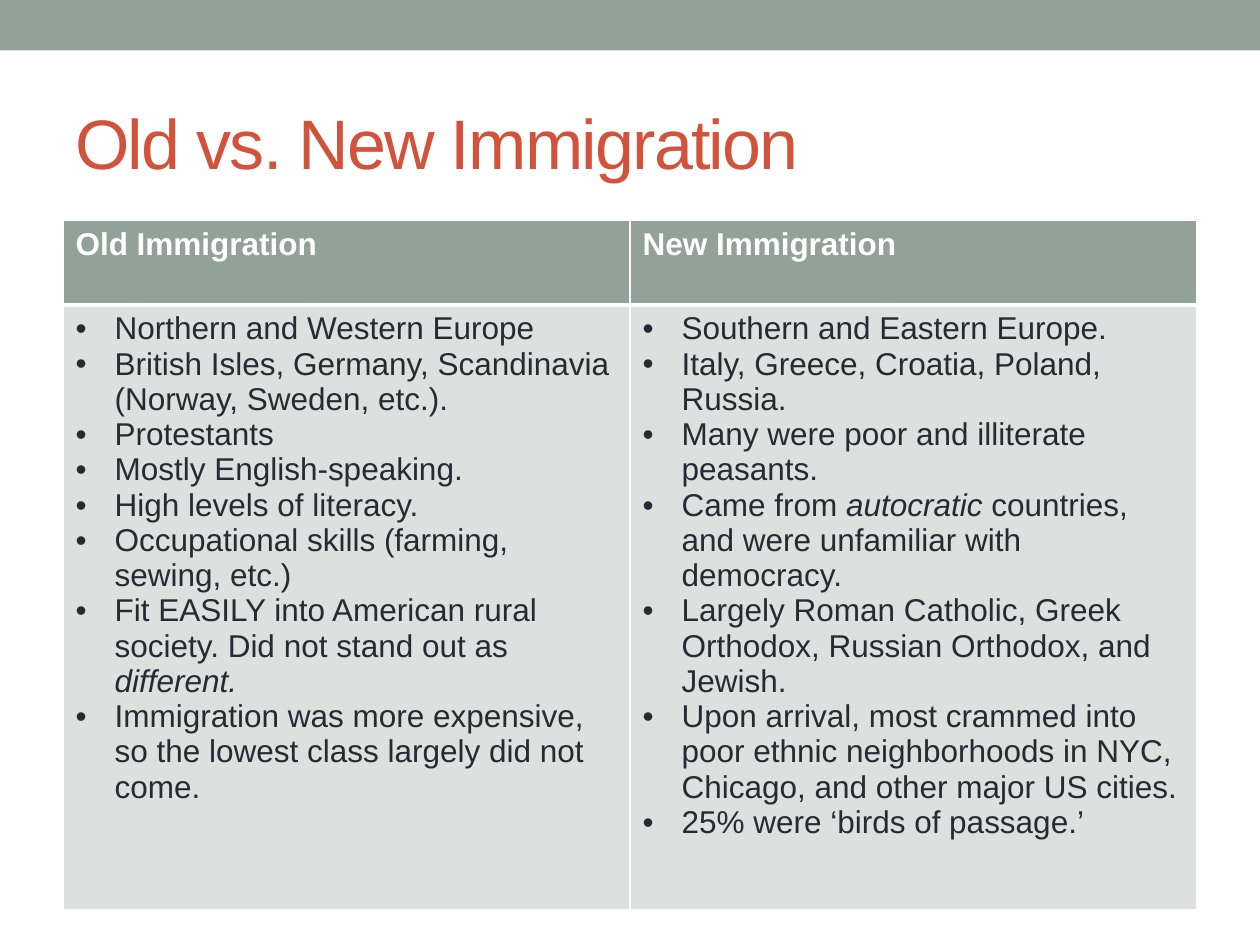
from pptx import Presentation
from pptx.dml.color import RGBColor
from pptx.enum.shapes import MSO_SHAPE
from pptx.enum.text import MSO_ANCHOR
from pptx.oxml import parse_xml
from pptx.oxml.ns import nsdecls
from pptx.util import Inches, Pt

RECT = MSO_SHAPE.RECTANGLE
MIDDLE = MSO_ANCHOR.MIDDLE

SAGE = RGBColor(0x93, 0xA2, 0x99)
MIST = RGBColor(0xDC, 0xE0, 0xDE)
RUST = RGBColor(0xD2, 0x53, 0x3C)
INK = RGBColor(0x29, 0x29, 0x34)
WHITE = RGBColor(0xFF, 0xFF, 0xFF)

HEADS = ["Old Immigration", "New Immigration"]

# Asterisks enclose words in italics
LISTS = [
    [
        "Northern and Western Europe",
        "British Isles, Germany, Scandinavia (Norway, Sweden, etc.).",
        "Protestants",
        "Mostly English-speaking.",
        "High levels of literacy.",
        "Occupational skills (farming, sewing, etc.)",
        "Fit EASILY into American rural society. Did not stand out as *different.*",
        "Immigration was more expensive, so the lowest class largely did not come.",
    ],
    [
        "Southern and Eastern Europe.",
        "Italy, Greece, Croatia, Poland, Russia.",
        "Many were poor and illiterate peasants.",
        "Came from *autocratic* countries, and were unfamiliar with democracy.",
        "Largely Roman Catholic, Greek Orthodox, Russian Orthodox, and Jewish.",
        "Upon arrival, most crammed into poor ethnic neighborhoods in NYC, "
        "Chicago, and other major US cities.",
        "25% were ‘birds of passage.’",
    ],
]


class Deck:
    """Holds the style and the current slide; lengths are in inches."""

    face = "Arial"
    wide, high = 10, 7.5
    edge = 0.5
    inner = wide - 2 * edge
    indent = Inches(0.31)

    def __init__(self):
        self.prs = Presentation()
        self.prs.slide_width = Inches(self.wide)
        self.prs.slide_height = Inches(self.high)
        self.slide = self.prs.slides.add_slide(self.prs.slide_layouts[6])

    def style(self, para, size, color, bold=False):
        font = para.font
        font.name, font.size, font.bold = self.face, Pt(size), bold
        font.color.rgb = color

    def band(self, height):
        bar = self.slide.shapes.add_shape(
            RECT, 0, 0, Inches(self.wide), Inches(height))
        bar.shadow.inherit = False
        bar.fill.solid()
        bar.fill.fore_color.rgb = SAGE
        bar.line.fill.background()

    def title(self, text, top, height):
        box = self.slide.shapes.add_textbox(
            Inches(self.edge), Inches(top), Inches(self.inner), Inches(height))
        frame = box.text_frame
        frame.word_wrap = True
        frame.vertical_anchor = MIDDLE
        para = frame.paragraphs[0]
        run = para.add_run()
        run.text = text
        run._r.get_or_add_rPr().set("spc", "-100")
        self.style(para, 40, RUST)

    def table(self, top, rows):
        shape = self.slide.shapes.add_table(
            len(rows), len(HEADS), Inches(self.edge), Inches(top),
            Inches(self.inner), Inches(sum(rows)))
        grid = shape.table
        for row, height in zip(grid.rows, rows):
            row.height = Inches(height)
        for col, (head, items) in enumerate(zip(HEADS, LISTS)):
            self.header(grid.cell(0, col), head)
            self.bullets(grid.cell(1, col), items)

    def header(self, cell, text):
        self.paint(cell, SAGE, low=3)
        para = cell.text_frame.paragraphs[0]
        para.text = text
        self.style(para, 18, WHITE, True)

    def bullets(self, cell, items):
        self.paint(cell, MIST, high=3)
        frame = cell.text_frame
        for num, item in enumerate(items):
            para = frame.add_paragraph() if num else frame.paragraphs[0]
            props = para._p.get_or_add_pPr()
            props.set("marL", str(self.indent))
            props.set("indent", str(-self.indent))
            props.append(parse_xml(
                f'<a:buFont {nsdecls("a")} typeface="{self.face}"/>'))
            props.append(parse_xml(f'<a:buChar {nsdecls("a")} char="•"/>'))
            for part, text in enumerate(item.split("*")):
                if text:
                    run = para.add_run()
                    run.text = text
                    if part % 2:
                        run.font.italic = True
            self.style(para, 18, INK)

    def paint(self, cell, color, high=1, low=1):
        # Borders must stand before the fill
        props = cell._tc.get_or_add_tcPr()
        for side, width in zip("LRTB", (1, 1, high, low)):
            props.append(parse_xml(
                f'<a:ln{side} {nsdecls("a")} w="{Pt(width)}"><a:solidFill>'
                f'<a:srgbClr val="{WHITE}"/></a:solidFill></a:ln{side}>'))
        cell.fill.solid()
        cell.fill.fore_color.rgb = color


def main():
    deck = Deck()
    deck.band(0.4)
    deck.title("Old vs. New Immigration", 0.58, 1.08)
    deck.table(1.75, [0.67, 4.8])
    deck.prs.save("out.pptx")


if __name__ == "__main__":
    main()
